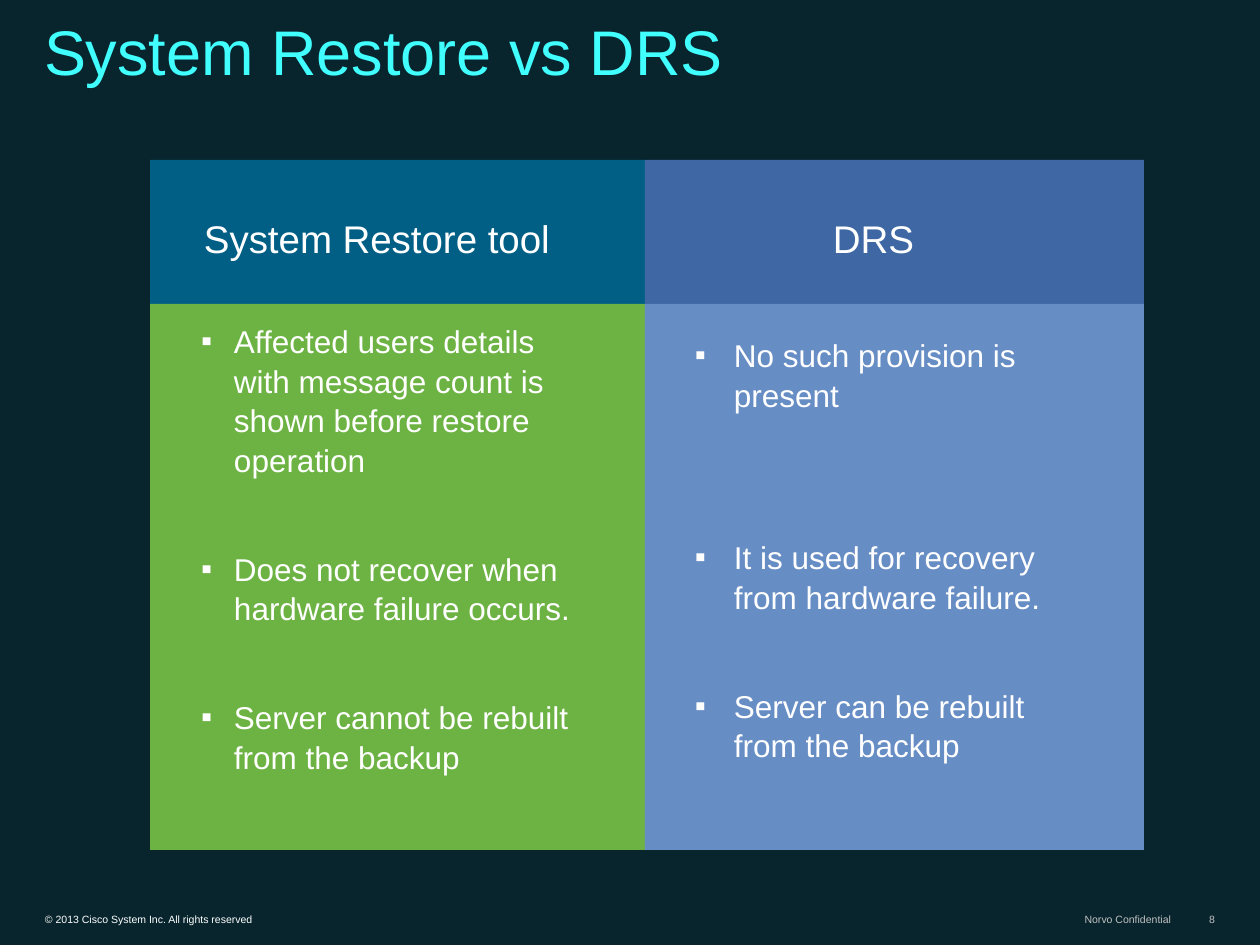
from lxml import etree
from pptx import Presentation
from pptx.dml.color import RGBColor
from pptx.enum.shapes import MSO_SHAPE
from pptx.enum.text import MSO_ANCHOR, PP_ALIGN
from pptx.oxml.ns import qn
from pptx.util import Emu, Pt

PX = 914400 / 126
FONT = "Arial"
RECTANGLE = MSO_SHAPE.RECTANGLE
LEFT, CENTER, RIGHT = PP_ALIGN.LEFT, PP_ALIGN.CENTER, PP_ALIGN.RIGHT
TOP, BOTTOM = MSO_ANCHOR.TOP, MSO_ANCHOR.BOTTOM

NIGHT = RGBColor(0x08, 0x25, 0x2E)
AQUA = RGBColor(0x40, 0xFF, 0xFE)
WHITE = RGBColor(0xFF, 0xFF, 0xFF)
SILVER = RGBColor(0xC0, 0xC0, 0xC0)
TEAL = RGBColor(0x01, 0x5F, 0x85)
GREEN = RGBColor(0x6D, 0xB3, 0x44)
INDIGO = RGBColor(0x3E, 0x67, 0xA4)
SKY = RGBColor(0x67, 0x8D, 0xC5)

HEADER_HEIGHT = 144
LINE_SPACING = 1.05


def px(length):
    return Emu(round(length * PX))


def add_panel(page, left, top, width, height, color):
    panel = page.shapes.add_shape(RECTANGLE, px(left), px(top), px(width), px(height))
    panel.shadow.inherit = False
    panel.fill.solid()
    panel.fill.fore_color.rgb = color
    panel.line.fill.background()


def add_frame(page, left, top, width, height, anchor=TOP, inset=(12, 6), wrap=True):
    box = page.shapes.add_textbox(px(left), px(top), px(width), px(height))
    frame = box.text_frame
    frame.word_wrap = wrap
    frame.vertical_anchor = anchor
    frame.margin_left = frame.margin_right = px(inset[0])
    frame.margin_top = frame.margin_bottom = px(inset[1])
    return frame


def write(para, text, size, color, align=LEFT, spacing=None):
    para.text = text
    para.alignment = align
    para.line_spacing = spacing
    para.font.name = FONT
    para.font.size = Pt(size)
    para.font.color.rgb = color


def add_bullet(para, indent):
    properties = para._p.get_or_add_pPr()
    properties.set("marL", str(px(indent)))
    properties.set("indent", str(-px(indent)))
    etree.SubElement(properties, qn("a:buFont")).set("typeface", FONT)
    etree.SubElement(properties, qn("a:buChar")).set("char", "▪")


def add_bullets(page, left, top, width, height, indent, items):
    """Items are (gap above, text) pairs."""
    frame = add_frame(page, left, top, width, height)
    for index, (gap, text) in enumerate(items):
        para = frame.add_paragraph() if index else frame.paragraphs[0]
        add_bullet(para, indent)
        write(para, text, 18, WHITE, spacing=LINE_SPACING)
        if gap:
            para.space_before = px(gap)


def add_column(page, left, top, width, height, colors, heading, bullets):
    """Draw a header and body panel; heading and bullets are offset from the column."""
    header_color, body_color = colors
    add_panel(page, left, top, width, HEADER_HEIGHT, header_color)
    add_panel(page, left, top + HEADER_HEIGHT, width, height - HEADER_HEIGHT, body_color)

    text, heading_left, heading_width, align = heading
    frame = add_frame(page, left + heading_left, top + 47, heading_width, 59)
    write(frame.paragraphs[0], text, 22, WHITE, align, LINE_SPACING)

    bullets_left, bullets_top, bullets_width, bullets_height, indent, items = bullets
    add_bullets(page, left + bullets_left, top + bullets_top,
                bullets_width, bullets_height, indent, items)


def add_title(page, left, top, width, height):
    frame = add_frame(page, left, top, width, height, BOTTOM)
    write(frame.paragraphs[0], "System Restore vs DRS", 36, AQUA, spacing=0.8)


def add_footer(page, top, height):
    notes = [
        (34, 471, "© 2013 Cisco System Inc. All rights reserved", WHITE, LEFT),
        (1070, 112, "Norvo Confidential", SILVER, RIGHT),
        (1191, 35, "8", SILVER, RIGHT),
    ]
    for left, width, text, color, align in notes:
        frame = add_frame(page, left, top, width, height, BOTTOM, (11, 5), align == LEFT)
        write(frame.paragraphs[0], text, 6, color, align)


def main():
    deck = Presentation()
    deck.slide_width, deck.slide_height = px(1260), px(945)
    page = deck.slides.add_slide(deck.slide_layouts[6])
    page.background.fill.solid()
    page.background.fill.fore_color.rgb = NIGHT

    add_title(page, 32, 0, 1155, 94)
    add_column(
        page, 150, 160, 495, 690, (TEAL, GREEN),
        ("System Restore tool", 42, 378, LEFT),
        (39, 154, 407, 528, 33, [
            (0, "Affected users details with message count is shown before restore operation"),
            (69, "Does not recover when hardware failure occurs."),
            (69, "Server cannot be rebuilt from the backup"),
        ]),
    )
    add_column(
        page, 645, 160, 499, 690, (INDIGO, SKY),
        ("DRS", 0, 457, CENTER),
        (38, 168, 420, 451, 39, [
            (0, "No such provision is present"),
            (123, "It is used for recovery from hardware failure."),
            (69, "Server can be rebuilt from the backup"),
        ]),
    )
    add_footer(page, 907, 24)
    deck.save("out.pptx")


if __name__ == "__main__":
    main()
